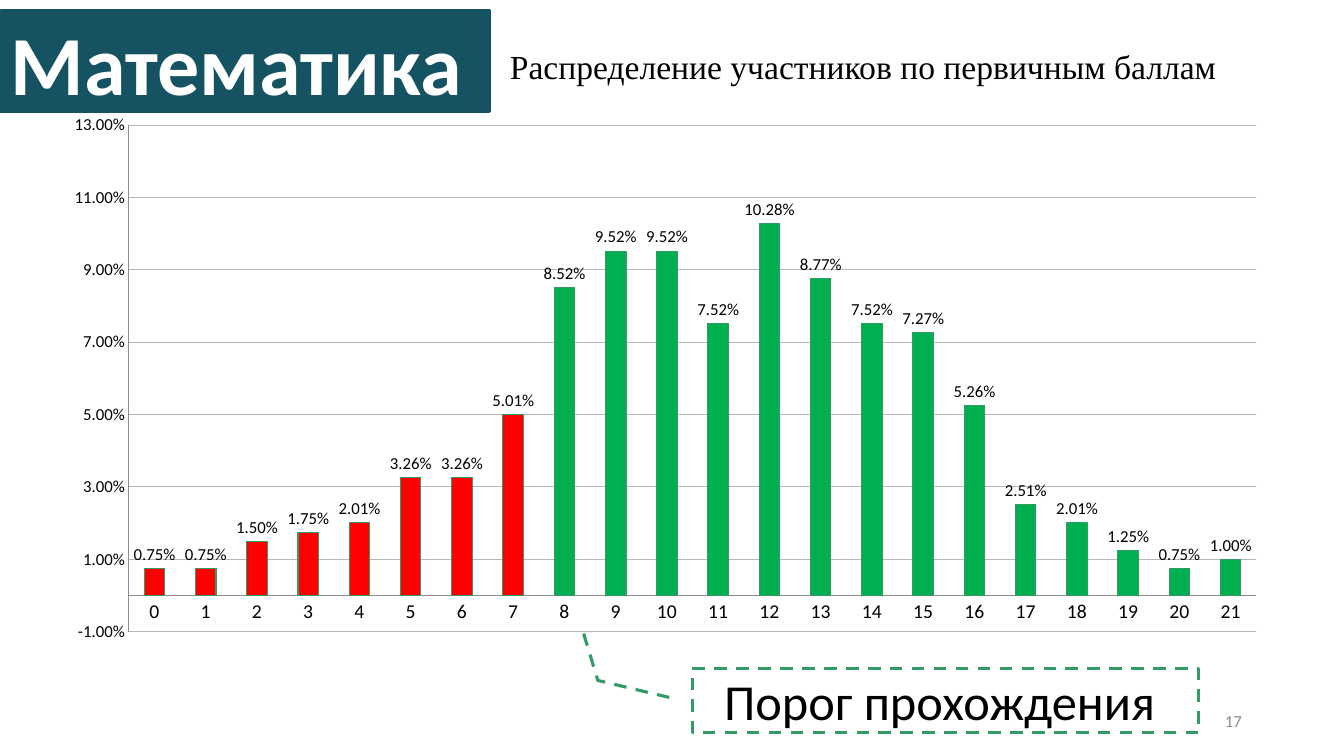
from lxml import etree
from pptx import Presentation
from pptx.chart.data import CategoryChartData
from pptx.dml.color import RGBColor
from pptx.enum import chart as charts, dml, shapes, text
from pptx.oxml.ns import qn
from pptx.util import Pt

# Content
SLIDE_SIZE = (960, 540)
PERCENTAGES = [0.75, 0.75, 1.50, 1.75, 2.01, 3.26, 3.26, 5.01, 8.52, 9.52, 9.52,
               7.52, 10.28, 8.77, 7.52, 7.27, 5.26, 2.51, 2.01, 1.25, 0.75, 1.00]
PASS_SCORE = 8
FAIL_COLOUR, PASS_COLOUR, OUTLINE = "FF0000", "00B050", "339C66"
CHART_BOX = (26.6, 77, 885, 400.3)
PLOT_AREA = {"x": 0.074, "y": 0.031, "w": 0.91, "h": 0.904}
CALLOUT_POINTS = [0.451, -0.046, 0.188, -0.187, -0.666, -0.22]

MIDDLE = text.MSO_ANCHOR.MIDDLE
HEADING = dict(box=(357.1, 29.5, 608.4, 36), words="Распределение участников по первичным баллам",
               font=dict(name="Times New Roman", size=Pt(24)))
SUBJECT = dict(box=(0.7, 7.9, 349.2, 72), words="Математика", colour="FFFFFF",
               font=dict(name="Calibri", size=Pt(60), bold=True), anchor=MIDDLE,
               kind=shapes.MSO_SHAPE.RECTANGLE, fill="155262", line="155262")
THRESHOLD = dict(box=(494.6, 477.4, 361.4, 46.1), words="Порог прохождения ",
                 font=dict(name="Calibri", size=Pt(36)), anchor=MIDDLE,
                 align=text.PP_ALIGN.CENTER,
                 kind=shapes.MSO_SHAPE.LINE_CALLOUT_2, fill="FFFFFF", line=OUTLINE)
PAGE_NUMBER = dict(box=(678.2, 500.4, 216, 28.8), words="17", colour="8C8C8C",
                   font=dict(name="Calibri", size=Pt(12)), anchor=MIDDLE,
                   align=text.PP_ALIGN.RIGHT)


def set_values(target, values):
    for name, value in values.items():
        setattr(target, name, value)


def paint(fill, colour):
    fill.solid()
    fill.fore_color.rgb = RGBColor.from_string(colour)


def draw_line(line, colour, width):
    paint(line.fill, colour)
    line.width = Pt(width)


def add_words(slide, box, words, font, colour="000000", anchor=text.MSO_ANCHOR.TOP,
              align=text.PP_ALIGN.LEFT, kind=None, fill=None, line=None):
    place = [Pt(value) for value in box]
    if kind is None:
        shape = slide.shapes.add_textbox(*place)
    else:
        shape = slide.shapes.add_shape(kind, *place)
        shape.shadow.inherit = False
        paint(shape.fill, fill)
        draw_line(shape.line, line, 2.25)
    set_values(shape.text_frame, dict(word_wrap=True, vertical_anchor=anchor))
    paragraph = shape.text_frame.paragraphs[0]
    paragraph.alignment = align
    run = paragraph.add_run()
    run.text = words
    set_values(run.font, font)
    paint(run.font.fill, colour)
    return shape


def fix_plot_area(chart):
    plot_area = chart._chartSpace.chart.plotArea
    for old in plot_area.findall(qn("c:layout")):
        plot_area.remove(old)
    layout = etree.Element(qn("c:layout"))
    manual = etree.SubElement(layout, qn("c:manualLayout"))
    settings = {"layoutTarget": "inner", "xMode": "edge", "yMode": "edge", **PLOT_AREA}
    for name, value in settings.items():
        etree.SubElement(manual, qn(f"c:{name}")).set("val", str(value))
    plot_area.insert(0, layout)


def add_score_chart(slide):
    data = CategoryChartData(number_format="0.00%")
    data.categories = [str(score) for score in range(len(PERCENTAGES))]
    data.add_series("Series 1", [round(value / 100, 4) for value in PERCENTAGES])
    chart = slide.shapes.add_chart(charts.XL_CHART_TYPE.COLUMN_CLUSTERED,
                                   *[Pt(value) for value in CHART_BOX], data).chart
    set_values(chart, dict(has_legend=False, has_title=False))
    set_values(chart.font, dict(name="Calibri", size=Pt(10)))
    paint(chart.font.fill, "000000")
    fix_plot_area(chart)

    # Axes
    for axis, size in ((chart.category_axis, 14), (chart.value_axis, 12)):
        set_values(axis, dict(has_title=False, major_tick_mark=charts.XL_TICK_MARK.NONE,
                              minor_tick_mark=charts.XL_TICK_MARK.NONE))
        axis.tick_labels.font.size = Pt(size)
        draw_line(axis.format.line, "8C8C8C", 0.75)
    values = chart.value_axis
    set_values(values, dict(minimum_scale=-0.01, maximum_scale=0.13, major_unit=0.02,
                            has_major_gridlines=True))
    draw_line(values.major_gridlines.format.line, "B7B7B7", 0.75)
    number_format = dict(number_format="0.00%", number_format_is_linked=False)
    set_values(values.tick_labels, number_format)

    # Columns and labels
    plot = chart.plots[0]
    set_values(plot, dict(gap_width=150, vary_by_categories=False, has_data_labels=True))
    set_values(plot.data_labels, dict(show_value=True, **number_format,
                                      position=charts.XL_LABEL_POSITION.OUTSIDE_END))
    plot.data_labels.font.size = Pt(12)
    series = plot.series[0]
    series.invert_if_negative = False
    failing = [series.points[score] for score in range(PASS_SCORE)]
    for column, colour in [(series, PASS_COLOUR)] + [(point, FAIL_COLOUR) for point in failing]:
        paint(column.format.fill, colour)
        draw_line(column.format.line, OUTLINE, 0.75)


def main():
    presentation = Presentation()
    set_values(presentation, dict(slide_width=Pt(SLIDE_SIZE[0]), slide_height=Pt(SLIDE_SIZE[1])))
    slide = presentation.slides.add_slide(presentation.slide_layouts[6])

    # Header, threshold callout and page number
    add_words(slide, **HEADING)
    add_words(slide, **SUBJECT)
    callout = add_words(slide, **THRESHOLD)
    callout.line.dash_style = dml.MSO_LINE.DASH
    for index, value in enumerate(CALLOUT_POINTS):
        callout.adjustments[index] = value
    add_words(slide, **PAGE_NUMBER)

    add_score_chart(slide)
    presentation.save("out.pptx")


if __name__ == "__main__":
    main()
